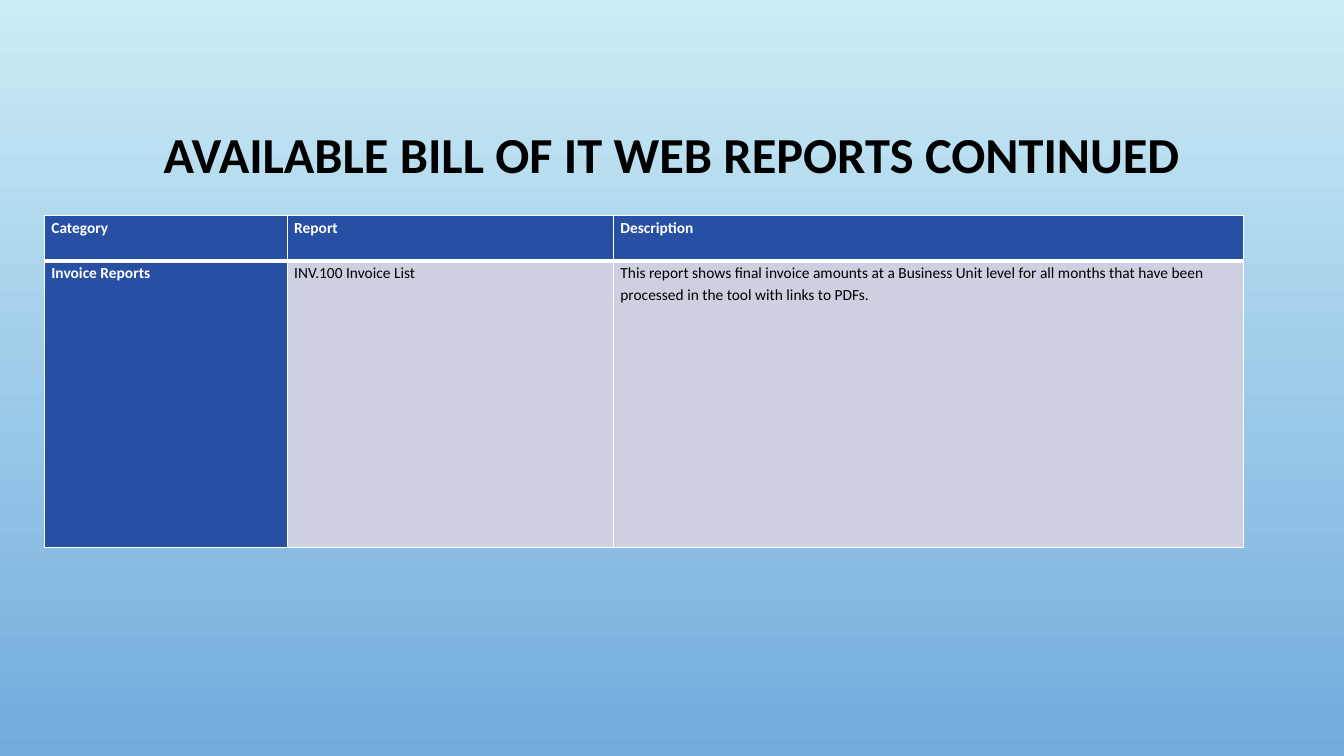
from lxml.etree import SubElement
from pptx import Presentation
from pptx.dml.color import RGBColor
from pptx.enum.text import MSO_ANCHOR, PP_ALIGN
from pptx.oxml.ns import qn
from pptx.util import Pt

TITLE = "AVAILABLE BILL OF IT WEB REPORTS CONTINUED"
REPORTS = [
    ("Category", "Report", "Description"),
    ("Invoice Reports", "INV.100 Invoice List",
     "This report shows final invoice amounts at a Business Unit level for all months "
     "that have been processed in the tool with links to PDFs."),
]
COLORS = {"sky": "CBECF5", "horizon": "73ABDD", "header": "274FA4",
          "body": "CDD0E0", "light": "FFFFFF", "dark": "000000"}
FONT = "Calibri"
COLUMN_WIDTHS = (173.5, 233, 450)
ROW_HEIGHTS = (32.4, 204.5)
TABLE_LEFT, TABLE_TOP = 31.7, 154.1
THIN, THICK = 1, 3


def color(name):
    """Return the named colour."""
    return RGBColor.from_string(COLORS[name])


def style(para, size, bold, color_name, spacing):
    """Set the font and line spacing of a paragraph."""
    para.line_spacing = spacing
    para.font.name = FONT
    para.font.size = Pt(size)
    para.font.bold = bold
    para.font.color.rgb = color(color_name)


def add_borders(cell, top, bottom):
    """Draw white borders, with the given top and bottom widths."""
    properties = cell._tc.get_or_add_tcPr()
    widths = {"lnL": THIN, "lnR": THIN, "lnT": top, "lnB": bottom}
    for index, (side, width) in enumerate(widths.items()):
        line = SubElement(properties, qn(f"a:{side}"), w=str(Pt(width)))
        fill = SubElement(line, qn("a:solidFill"))
        SubElement(fill, qn("a:srgbClr"), val=COLORS["light"])
        properties.insert(index, line)


def add_background(page):
    """Fill the page with a downward gradient."""
    fill = page.background.fill
    fill.gradient()
    fill.gradient_angle = 270
    for stop, name in zip(fill.gradient_stops, ("sky", "horizon")):
        stop.color.rgb = color(name)


def add_title(page):
    """Add the centred heading."""
    box = page.shapes.add_textbox(Pt(72), Pt(49), Pt(816), Pt(126))
    frame = box.text_frame
    frame.word_wrap = True
    frame.vertical_anchor = MSO_ANCHOR.MIDDLE
    frame.text = TITLE
    para = frame.paragraphs[0]
    para.alignment = PP_ALIGN.CENTER
    style(para, 36, True, "dark", 0.9)


def add_reports(page):
    """Add the table of reports."""
    table = page.shapes.add_table(
        len(ROW_HEIGHTS), len(COLUMN_WIDTHS), Pt(TABLE_LEFT), Pt(TABLE_TOP),
        Pt(sum(COLUMN_WIDTHS)), Pt(sum(ROW_HEIGHTS))).table
    table.first_col = True
    table.horz_banding = False
    for column, width in zip(table.columns, COLUMN_WIDTHS):
        column.width = Pt(width)
    for row, height in zip(table.rows, ROW_HEIGHTS):
        row.height = Pt(height)
    for row_index, texts in enumerate(REPORTS):
        for column_index, text in enumerate(texts):
            cell = table.cell(row_index, column_index)
            heading = row_index == 0 or column_index == 0
            cell.margin_left = cell.margin_right = Pt(5)
            cell.margin_top = cell.margin_bottom = 0
            cell.fill.solid()
            cell.fill.fore_color.rgb = color("header" if heading else "body")
            cell.text = text
            style(cell.text_frame.paragraphs[0], 11, heading,
                  "light" if heading else "dark", 1.15)
            add_borders(cell, THICK if row_index else THIN,
                        THIN if row_index else THICK)


def main():
    """Build and save the deck."""
    deck = Presentation()
    deck.slide_width, deck.slide_height = Pt(960), Pt(540)
    page = deck.slides.add_slide(deck.slide_layouts[6])
    add_background(page)
    add_title(page)
    add_reports(page)
    deck.save("out.pptx")


if __name__ == "__main__":
    main()
